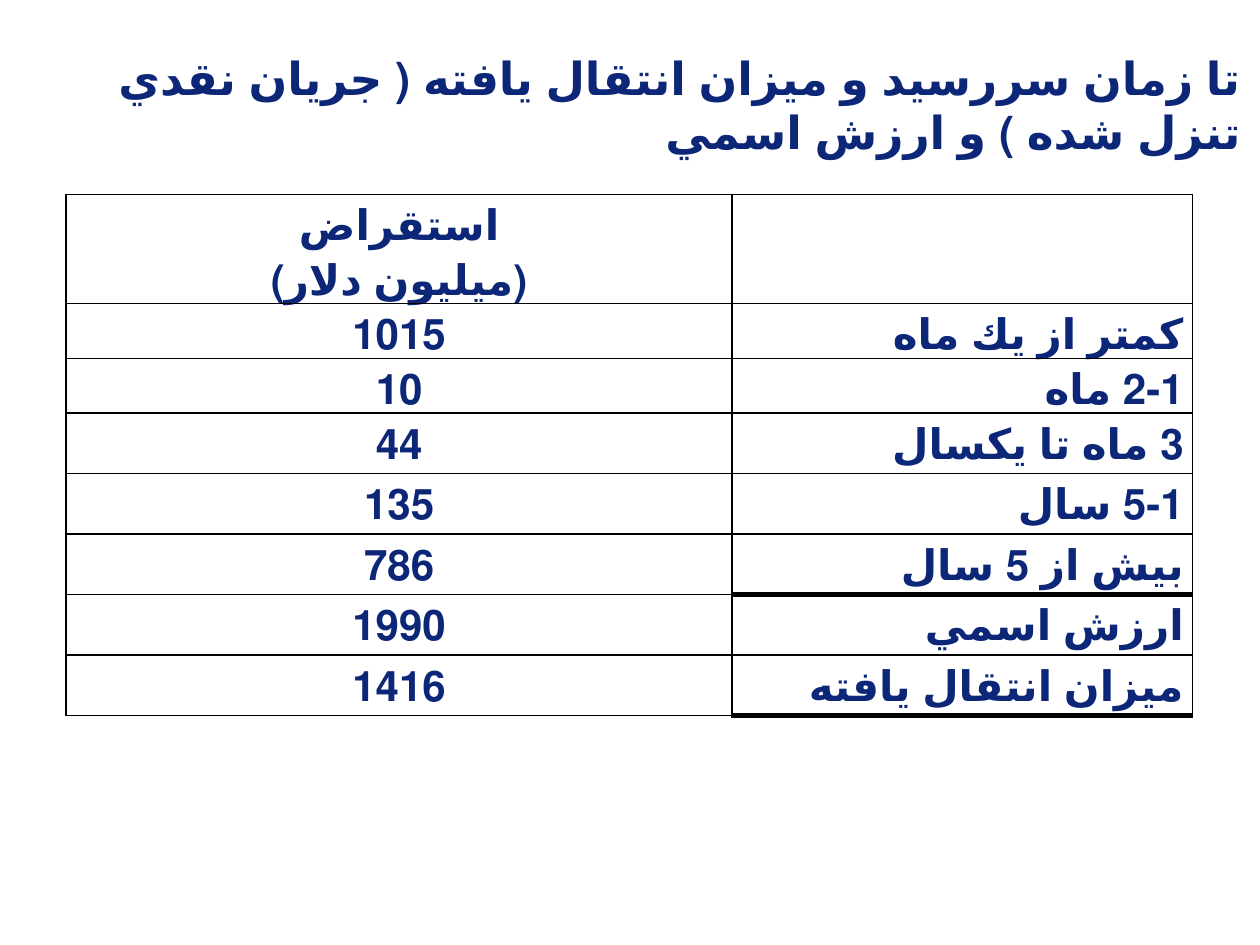
from lxml.etree import SubElement
from pptx import Presentation
from pptx.dml.color import RGBColor
from pptx.enum.lang import MSO_LANGUAGE_ID
from pptx.enum.text import MSO_ANCHOR, PP_ALIGN
from pptx.oxml.ns import qn
from pptx.util import Cm, Pt

COLORS = {"text": "0C2678", "border": "000000"}
TITLE = "تا زمان سررسيد و ميزان انتقال يافته ( جريان نقدي تنزل شده ) و ارزش اسمي"
ROWS = [
    ("استقراض\n(ميليون دلار)", ""),
    ("1015", "كمتر از يك ماه"),
    ("10", "2-1 ماه"),
    ("44", "3 ماه تا يكسال"),
    ("135", "5-1 سال"),
    ("786", "بيش از 5 سال"),
    ("1990", "ارزش اسمي"),
    ("1416", "ميزان انتقال يافته"),
]
COLUMN_WIDTHS = [13.43, 9.28]
ROW_HEIGHTS = [2.2, 1.1, 1.1] + [1.22] * 5
THICK_BELOW = (5, 7)  # label cells closed by a heavy rule


def format_text(text_frame, size, font, alignment):
    """Style every paragraph as bold right-to-left Persian text."""
    for paragraph in text_frame.paragraphs:
        paragraph.alignment = alignment
        paragraph._p.get_or_add_pPr().set("rtl", "1")
        for run in paragraph.runs:
            run.font.size = Pt(size)
            run.font.bold = True
            run.font.color.rgb = RGBColor.from_string(COLORS["text"])
            run.font.name = font
            run.font.language_id = MSO_LANGUAGE_ID.FARSI


def set_borders(cell, widths):
    """Draw the cell edges; widths maps L, R, T and B to points."""
    properties = cell._tc.get_or_add_tcPr()
    for side in "LRTB":
        line = SubElement(properties, qn(f"a:ln{side}"), w=str(Pt(widths[side])))
        fill = SubElement(line, qn("a:solidFill"))
        SubElement(fill, qn("a:srgbClr"), val=COLORS["border"])


def add_title(slide, left, top, width, height):
    shape = slide.shapes.add_textbox(left, top, width, height)
    text_frame = shape.text_frame
    text_frame.word_wrap = True
    text_frame.vertical_anchor = MSO_ANCHOR.TOP
    text_frame.margin_left = text_frame.margin_right = 0
    text_frame.margin_top = text_frame.margin_bottom = 0
    text_frame.text = TITLE
    format_text(text_frame, 26, "DejaVu Sans", PP_ALIGN.RIGHT)


def fill_cell(cell, text, alignment):
    cell.margin_left = cell.margin_right = Cm(0.18)
    cell.margin_top = cell.margin_bottom = 0
    cell.vertical_anchor = MSO_ANCHOR.TOP
    cell.text_frame.text = text
    format_text(cell.text_frame, 24, "Times New Roman", alignment)
    for paragraph in cell.text_frame.paragraphs:
        paragraph.line_spacing = Pt(31.2)


def add_maturity_table(slide, left, top):
    frame = slide.shapes.add_table(
        len(ROWS), len(COLUMN_WIDTHS), left, top,
        Cm(sum(COLUMN_WIDTHS)), Cm(sum(ROW_HEIGHTS)))
    table = frame.table
    table.first_row = False
    table.horz_banding = False
    for column, width in zip(table.columns, COLUMN_WIDTHS):
        column.width = Cm(width)
    for row, height in zip(table.rows, ROW_HEIGHTS):
        row.height = Cm(height)

    # Amounts are centred, labels sit on the right
    alignments = (PP_ALIGN.CENTER, PP_ALIGN.RIGHT)
    for row_index, texts in enumerate(ROWS):
        for column_index, text in enumerate(texts):
            cell = table.cell(row_index, column_index)
            fill_cell(cell, text, alignments[column_index])
            is_label = column_index == 1
            set_borders(cell, {
                "L": 1, "R": 1,
                "T": 3 if is_label and row_index - 1 in THICK_BELOW else 1,
                "B": 3 if is_label and row_index in THICK_BELOW else 1})
            cell.fill.background()


def main():
    presentation = Presentation()
    presentation.slide_width = Cm(25.4)
    presentation.slide_height = Cm(19.05)
    slide = presentation.slides.add_slide(presentation.slide_layouts[6])
    add_maturity_table(slide, Cm(1.33), Cm(3.92))
    add_title(slide, Cm(0.23), Cm(1), Cm(24.79), Cm(1.73))
    presentation.save("out.pptx")


if __name__ == "__main__":
    main()
